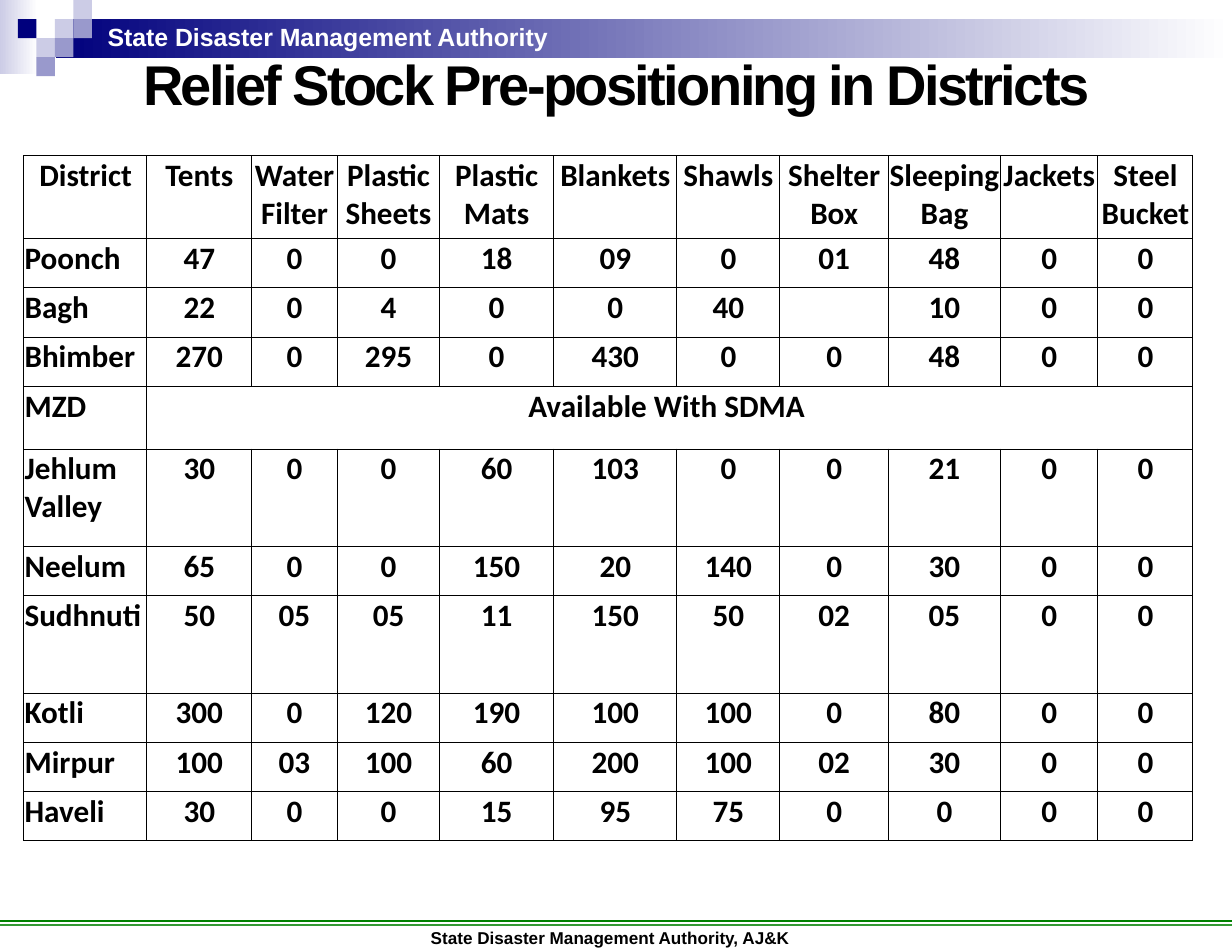
from lxml import etree
from pptx import Presentation
from pptx.dml.color import RGBColor
from pptx.enum import shapes, text
from pptx.oxml import ns
from pptx.util import Inches, Pt

NAVY = RGBColor(0x00, 0x00, 0x7D)
LILAC = RGBColor(0xCC, 0xCC, 0xE6)
MAUVE = RGBColor(0x99, 0x99, 0xCC)
WHITE = RGBColor(0xFF, 0xFF, 0xFF)
BLACK = RGBColor(0x00, 0x00, 0x00)
GREEN = RGBColor(0x00, 0x80, 0x00)
LEAF = RGBColor(0x33, 0x99, 0x33)

MID = text.PP_ALIGN.CENTER
SIDE = text.PP_ALIGN.JUSTIFY
WIDTHS = [1.1, 0.93, 0.77, 0.91, 1.02, 1.1, 0.92, 0.97, 1, 0.87, 0.85]
HEIGHTS = {0: 0.74, 4: 0.56, 5: 0.87, 7: 0.87}
SQUARES = [(2, 1, LILAC), (3, 0, LILAC), (3, 1, MAUVE), (1, 2, LILAC),
           (0, 1, NAVY), (2, 2, MAUVE), (1, 3, MAUVE)]
STOCK = [
    ["District", "Tents", "Water Filter", "Plastic Sheets", "Plastic Mats", "Blankets",
     "Shawls", "Shelter Box", "Sleeping Bag", "Jackets", "Steel Bucket"],
    ["Poonch", "47", "0", "0", "18", "09", "0", "01", "48", "0", "0"],
    ["Bagh", "22", "0", "4", "0", "0", "40", "", "10", "0", "0"],
    ["Bhimber", "270", "0", "295", "0", "430", "0", "0", "48", "0", "0"],
    ["MZD", "Available With SDMA "],
    ["Jehlum Valley", "30", "0", "0", "60", "103", "0", "0", "21", "0", "0"],
    ["Neelum", "65", "0", "0", "150", "20", "140", "0", "30", "0", "0"],
    ["Sudhnuti", "50", "05", "05", "11", "150", "50", "02", "05", "0", "0"],
    ["Kotli", "300", "0", "120", "190", "100", "100", "0", "80", "0", "0"],
    ["Mirpur", "100", "03", "100", "60", "200", "100", "02", "30", "0", "0"],
    ["Haveli", "30", "0", "0", "15", "95", "75", "0", "0", "0", "0"],
]


class Board:
    """Holds the fonts and the current slide, and draws each kind of element."""

    def __init__(self, slide, head="Arial", body="Calibri"):
        self.slide, self.head, self.body = slide, head, body

    def style(self, frame, words, size, color=BLACK, align=None, font=None):
        frame.text = words
        para = frame.paragraphs[0]
        para.alignment = align
        for run in para.runs:
            run.font.name = font or self.head
            run.font.size = Pt(size)
            run.font.bold = True
            run.font.color.rgb = color
        return para

    def rect(self, x, y, w, h, color, fade=None):
        box = self.slide.shapes.add_shape(
            shapes.MSO_SHAPE.RECTANGLE, Inches(x), Inches(y), Inches(w), Inches(h))
        box.shadow.inherit = False
        box.line.fill.background()
        if fade is None:
            box.fill.solid()
            box.fill.fore_color.rgb = color
        else:
            box.fill.gradient()
            box.fill.gradient_angle = 0
            for stop, tone in zip(box.fill.gradient_stops, (color, fade)):
                stop.color.rgb = tone

    def rule(self, y, color):
        line = self.slide.shapes.add_connector(
            shapes.MSO_CONNECTOR.STRAIGHT, 0, Inches(y), Inches(11), Inches(y))
        line.line.color.rgb = color
        line.line.width = Pt(1.25)
        etree.SubElement(line._element.spPr, ns.qn("a:effectLst"))

    def label(self, x, y, w, h, words, size, color, align=None, wrap=True):
        box = self.slide.shapes.add_textbox(Inches(x), Inches(y), Inches(w), Inches(h))
        frame = box.text_frame
        frame.word_wrap = wrap
        frame.margin_left = frame.margin_right = Inches(0.11)
        frame.margin_top = frame.margin_bottom = Inches(0.06)
        self.style(frame, words, size, color, align)

    def title(self, x, y, w, h, words):
        box = self.slide.shapes.title
        box.left, box.top, box.width, box.height = map(Inches, (x, y, w, h))
        frame = box.text_frame
        frame.auto_size = text.MSO_AUTO_SIZE.NONE
        frame.vertical_anchor = text.MSO_ANCHOR.TOP
        frame.margin_left = frame.margin_right = 0
        frame.margin_top = frame.margin_bottom = 0
        para = self.style(frame, words, 36, align=MID)
        para.line_spacing = 0.9
        para.runs[0].font._element.set("spc", "-170")

    def border(self, cell):
        props = cell._tc.get_or_add_tcPr()
        for side in ("lnL", "lnR", "lnT", "lnB"):
            edge = etree.SubElement(props, ns.qn("a:" + side), w=str(Pt(0.5)))
            fill = etree.SubElement(edge, ns.qn("a:solidFill"))
            etree.SubElement(fill, ns.qn("a:srgbClr"), val=str(BLACK))

    def table(self, x, y, rows):
        tall = [HEIGHTS.get(i, 0.44) for i in range(len(rows))]
        grid = self.slide.shapes.add_table(
            len(rows), len(WIDTHS), Inches(x), Inches(y),
            Inches(sum(WIDTHS)), Inches(sum(tall))).table
        grid.first_row = grid.horz_banding = False
        for col, width in zip(grid.columns, WIDTHS):
            col.width = Inches(width)
        for r, words in enumerate(rows):
            grid.rows[r].height = Inches(tall[r])
            for c in range(len(WIDTHS)):
                cell = grid.cell(r, c)
                cell.margin_left = cell.margin_top = Inches(0.01)
                cell.margin_right = cell.margin_bottom = 0
                self.border(cell)
                cell.fill.background()
                if c < len(words):
                    align = SIDE if r and c == 0 else MID
                    self.style(cell.text_frame, words[c], 20, align=align, font=self.body)
            if len(words) < len(WIDTHS):
                grid.cell(r, len(words) - 1).merge(grid.cell(r, len(WIDTHS) - 1))


def main():
    deck = Presentation()
    deck.slide_width, deck.slide_height = Inches(11), Inches(8.5)
    board = Board(deck.slides.add_slide(deck.slide_layouts[5]))
    board.rect(0, 0, 0.34, 0.66, LILAC, WHITE)
    board.rect(0.5, 0.17, 10.5, 0.35, NAVY, WHITE)
    for col, row, color in SQUARES:
        board.rect(0.16 + 0.165 * col, 0.17 * row, 0.165, 0.17, color)
    board.label(0.85, 0.13, 4.18, 0.38, "State Disaster Management Authority",
                16, WHITE, wrap=False)
    board.rule(8.22, GREEN)
    board.rule(8.26, LEAF)
    board.label(2.83, 8.22, 5.28, 0.31, "State Disaster Management Authority, AJ&K ",
                11, BLACK, MID)
    board.title(0, 0.51, 11, 0.55, "Relief Stock Pre-positioning in Districts")
    board.table(0.21, 1.39, STOCK)
    deck.save("out.pptx")


if __name__ == "__main__":
    main()
